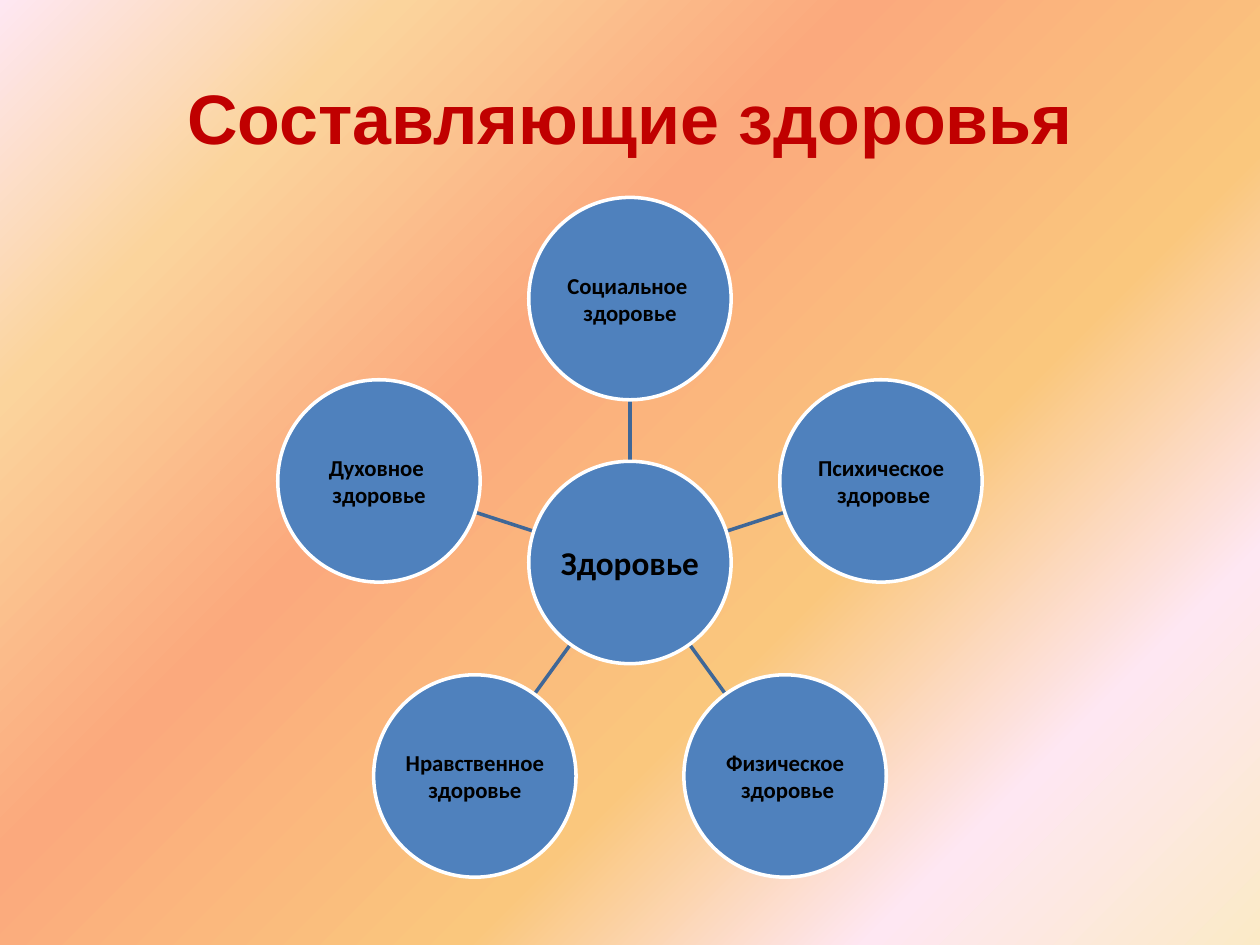
from math import cos, radians, sin

from lxml.etree import SubElement
from pptx import Presentation
from pptx.dml.color import RGBColor
from pptx.enum.shapes import MSO_CONNECTOR as CONN, MSO_SHAPE as SHAPE
from pptx.enum.text import MSO_ANCHOR as ANCHOR, PP_ALIGN as ALIGN
from pptx.oxml.ns import qn
from pptx.util import Cm, Pt


def rgb(code):
    return RGBColor.from_string(code)


def write(sp, text, size=13, font="Calibri", color="000000", inset=0.03, wrap=False):
    """Fill a shape with centred bold text, one paragraph per line."""
    tf = sp.text_frame
    tf.word_wrap = wrap
    tf.vertical_anchor = ANCHOR.MIDDLE
    tf.margin_left = tf.margin_right = tf.margin_top = tf.margin_bottom = Cm(inset)
    for i, line in enumerate(text.split("\n")):
        p = tf.paragraphs[0] if i == 0 else tf.add_paragraph()
        p.alignment = ALIGN.CENTER
        r = p.add_run()
        r.text = line
        r.font.name, r.font.size, r.font.bold = font, Pt(size), True
        r.font.color.rgb = rgb(color)


prs = Presentation()
prs.slide_width, prs.slide_height = Cm(25.4), Cm(19.05)
s = prs.slides.add_slide(prs.slide_layouts[5])

# Diagonal background gradient
fill = s.background.fill
fill.gradient()
fill.gradient_angle = 135
stops = s.element.find(".//" + qn("a:gsLst"))
for stop in list(stops):
    stops.remove(stop)
for pos, color in [(0, "FBEAC7"), (18, "FEE7F2"), (36, "FAC77D"),
                   (61, "FBA97D"), (82, "FBD49C"), (100, "FEE7F2")]:
    stop = SubElement(stops, qn("a:gs"), pos=str(pos * 1000))
    SubElement(stop, qn("a:srgbClr"), val=color)

title = s.shapes.title
title.left, title.top, title.width, title.height = Cm(1.27), Cm(0.76), Cm(22.86), Cm(3.18)
write(title, "Составляющие здоровья", size=40, font="Arial", color="C00000",
      inset=0.13, wrap=True)

# Hub in the middle, five parts evenly around it, clockwise from the top
HUB_X, HUB_Y = 12.7, 11.34
RING, RADIUS = 5.32, 2.04
parts = ["Социальное \nздоровье", "Психическое\n здоровье", "Физическое\n здоровье",
         "Нравственное\nздоровье", "Духовное \nздоровье"]
circles = [(HUB_X, HUB_Y, "Здоровье", 19)]

for i, part in enumerate(parts):
    angle = radians(360 / len(parts) * i - 90)
    dx, dy = cos(angle), sin(angle)
    circles.append((HUB_X + RING * dx, HUB_Y + RING * dy, part, 13))
    start, end = RADIUS, RING - RADIUS
    spoke = s.shapes.add_connector(
        CONN.STRAIGHT, Cm(HUB_X + start * dx), Cm(HUB_Y + start * dy),
        Cm(HUB_X + end * dx), Cm(HUB_Y + end * dy))
    spoke.line.color.rgb = rgb("3F6797")
    spoke.line.width = Pt(2)
    SubElement(spoke._element.spPr, qn("a:effectLst"))

for x, y, text, size in circles:
    sp = s.shapes.add_shape(SHAPE.OVAL, Cm(x - RADIUS), Cm(y - RADIUS),
                            Cm(2 * RADIUS), Cm(2 * RADIUS))
    sp.shadow.inherit = False
    sp.fill.solid()
    sp.fill.fore_color.rgb = rgb("4F81BD")
    sp.line.color.rgb = rgb("FFFFFF")
    sp.line.width = Pt(2)
    write(sp, text, size=size)

prs.save("out.pptx")
